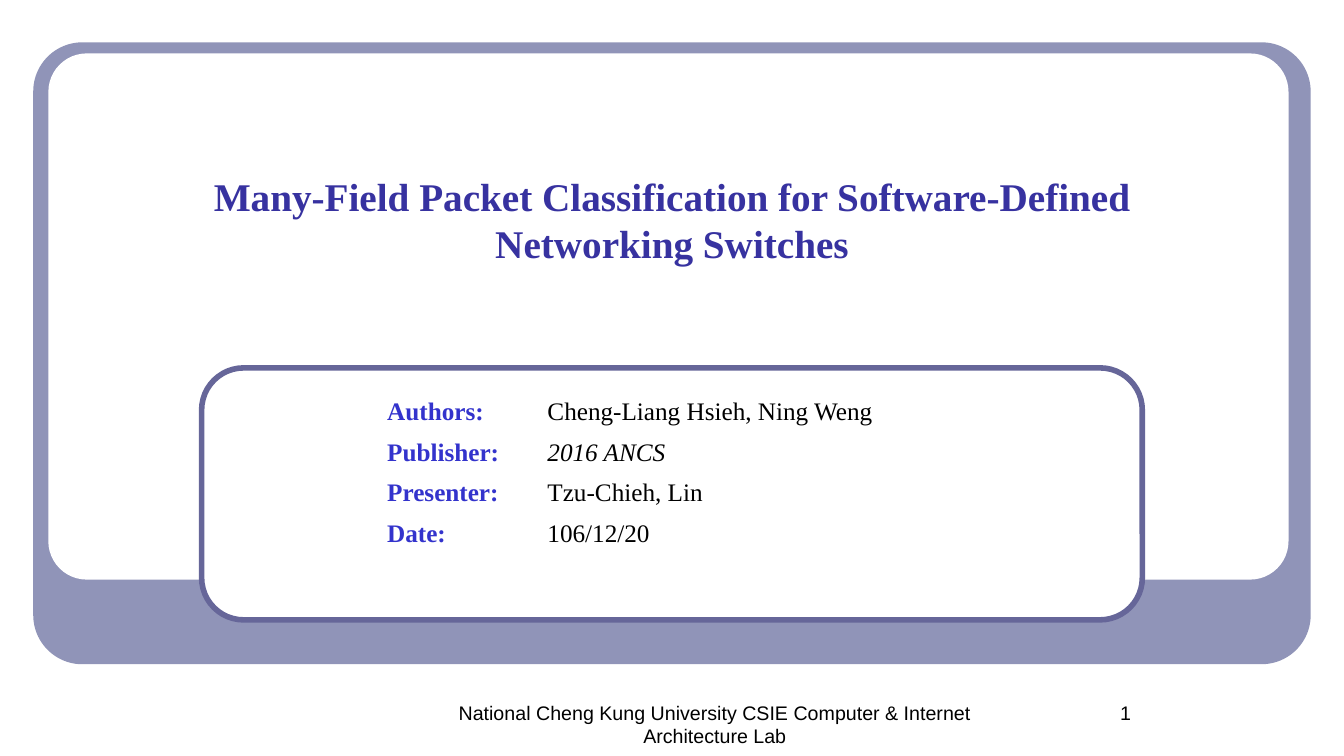
from pptx import Presentation
from pptx import util as u
from pptx.dml.color import RGBColor
from pptx.enum import shapes, text

# Content
TITLE = "Many-Field Packet Classification for Software-Defined\nNetworking Switches"
DETAILS = [
    ("Authors:", "Cheng-Liang Hsieh, Ning Weng"),
    ("Publisher:", "2016 ANCS"),
    ("Presenter:", "Tzu-Chieh, Lin"),
    ("Date:", "106/12/20"),
]
ITALIC_ROW = 1
FOOTER = "National Cheng Kung University CSIE Computer & Internet Architecture Lab"
PAGE_NUMBER = "1"

# Colours and fonts
WHITE = RGBColor(0xFF, 0xFF, 0xFF)
BLACK = RGBColor(0x00, 0x00, 0x00)
LAVENDER = RGBColor(0x90, 0x94, 0xB8)
SLATE = RGBColor(0x66, 0x66, 0x99)
INDIGO = RGBColor(0x37, 0x32, 0xA0)
BLUE = RGBColor(0x33, 0x33, 0xCC)
SERIF, SANS = "Times New Roman", "Arial"

# Layout in inches: left, top, width, height
WIDTH, HEIGHT = 13.33, 7.5
PANELS = [  # place, corner, fill, outline
    ((0.33, 0.42, 12.67, 6.17), 0.079, LAVENDER, None),
    ((0.48, 0.53, 12.3, 5.22), 0.073, WHITE, None),
    ((2, 3.65, 9.33, 2.5), 0.167, WHITE, SLATE),
]
TITLE_PLACE = (1, 0.94, WIDTH - 2, 2.48)
FOOTER_TOP, FOOTER_HEIGHT = 6.9, 0.5
TABLE_LEFT, TABLE_TOP = 3.74, 3.9
COLUMNS = (1.59, 5.1)
ROWS = (0.4, 0.38, 0.41, 0.41)


def inches(place):
    return [u.Inches(length) for length in place]


def write(frame, words, size, font, colour, bold=False, italic=False, align=None):
    para = frame.paragraphs[0]
    para.text = words
    para.alignment = align
    for span in para.runs:
        span.font.size = u.Pt(size)
        span.font.name = font
        span.font.color.rgb = colour
        span.font.bold = bold
        span.font.italic = italic


def add_text(page, place, words, size, font, colour, bold=False,
             anchor=text.MSO_ANCHOR.TOP):
    frame = page.shapes.add_textbox(*inches(place)).text_frame
    frame.word_wrap = True
    frame.vertical_anchor = anchor
    write(frame, words, size, font, colour, bold, align=text.PP_ALIGN.CENTER)


def add_panel(page, place, corner, fill, outline):
    panel = page.shapes.add_shape(shapes.MSO_SHAPE.ROUNDED_RECTANGLE, *inches(place))
    panel.shadow.inherit = False
    panel.adjustments[0] = corner
    panel.fill.solid()
    panel.fill.fore_color.rgb = fill
    if outline is None:
        panel.line.fill.background()
    else:
        panel.line.color.rgb = outline
        panel.line.width = u.Pt(4)


def add_details(page):
    place = (TABLE_LEFT, TABLE_TOP, sum(COLUMNS), sum(ROWS))
    table = page.shapes.add_table(len(ROWS), len(COLUMNS), *inches(place)).table
    table.first_row = table.horz_banding = False
    for column, width in zip(table.columns, COLUMNS):
        column.width = u.Inches(width)
    for number, (row, height, entry) in enumerate(zip(table.rows, ROWS, DETAILS)):
        row.height = u.Inches(height)
        label, value = row.cells
        for cell in (label, value):
            cell.fill.background()
        write(label.text_frame, entry[0], 18, SERIF, BLUE, bold=True)
        write(value.text_frame, entry[1], 18, SERIF, BLACK,
              italic=number == ITALIC_ROW)


def main():
    deck = Presentation()
    deck.slide_width, deck.slide_height = inches((WIDTH, HEIGHT))
    page = deck.slides.add_slide(deck.slide_layouts[6])

    # Frame and details panel
    for panel in PANELS:
        add_panel(page, *panel)

    # Title
    add_text(page, TITLE_PLACE, TITLE, 28, SERIF, INDIGO, bold=True,
             anchor=text.MSO_ANCHOR.MIDDLE)

    # Footer and page number
    for left, width, words in ((4.15, 5.88, FOOTER), (10, 2.33, PAGE_NUMBER)):
        add_text(page, (left, FOOTER_TOP, width, FOOTER_HEIGHT), words, 14, SANS, BLACK)

    # Paper details
    add_details(page)
    deck.save("out.pptx")


if __name__ == "__main__":
    main()
